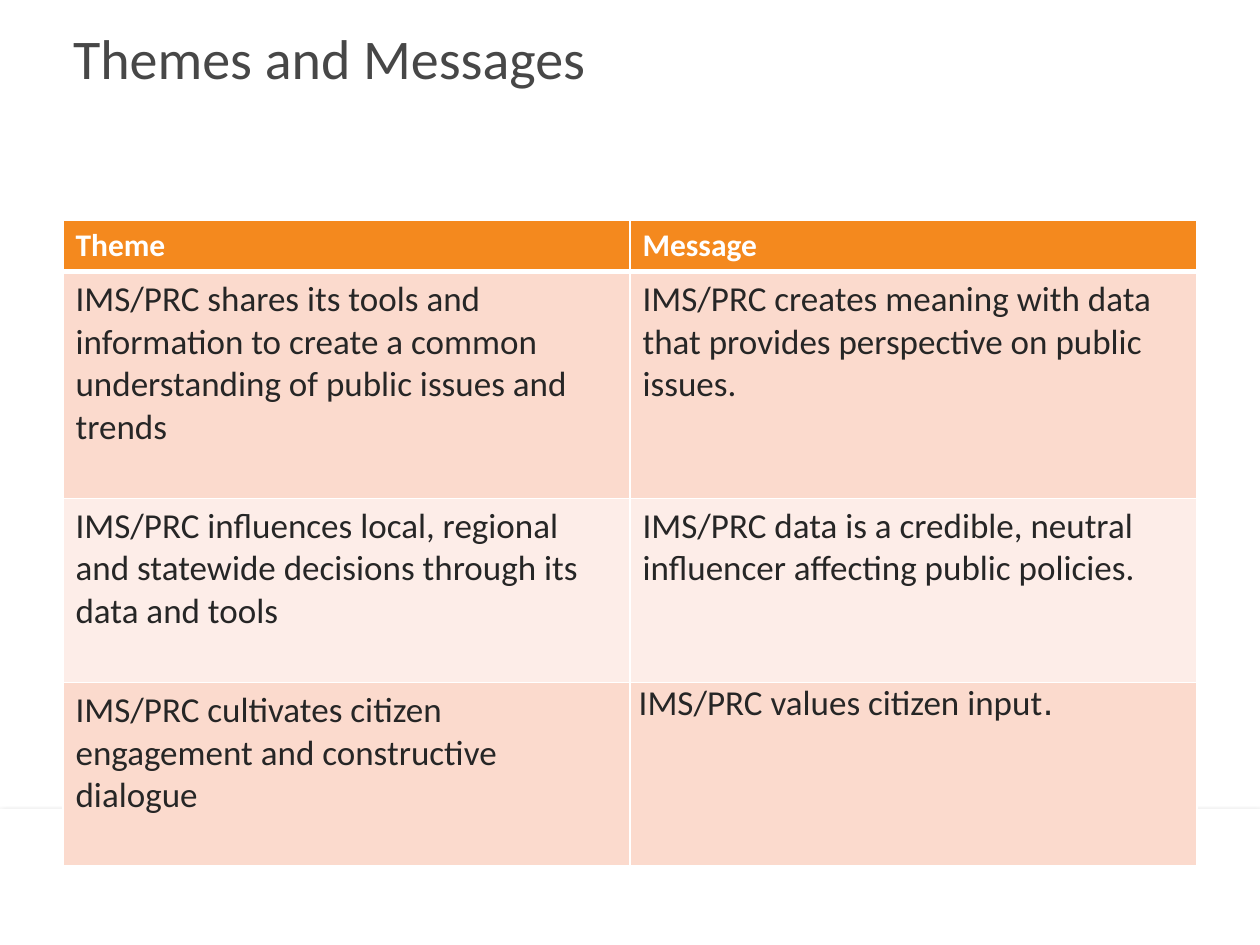
from lxml import etree
from pptx import Presentation
from pptx.dml.color import RGBColor
from pptx.enum.shapes import MSO_SHAPE
from pptx.enum.text import MSO_ANCHOR, PP_ALIGN
from pptx.oxml import parse_xml
from pptx.util import Pt

RECT = MSO_SHAPE.RECTANGLE
MIDDLE = MSO_ANCHOR.MIDDLE
LEFT = PP_ALIGN.LEFT
NS = "http://schemas.openxmlformats.org/drawingml/2006/main"

TITLE = "Themes and Messages"
ROWS = [
    ("Theme", "Message"),
    ("IMS/PRC shares its tools and information to create a common "
     "understanding of public issues and trends",
     "IMS/PRC creates meaning with data that provides perspective on "
     "public issues."),
    ("IMS/PRC influences local, regional and statewide decisions through "
     "its data and tools",
     "IMS/PRC data is a credible, neutral influencer affecting public "
     "policies."),
    ("IMS/PRC cultivates citizen engagement and constructive dialogue",
     "IMS/PRC values citizen input"),
]
HEIGHTS = [28.8, 129.6, 105.2, 104.6]
WIDTH = 324
FONT = "Calibri"
COLORS = {"white": "FFFFFF", "title": "474747", "text": "262626",
          "head": "F4891E", "odd": "FBDACD", "even": "FDEDE8"}


def color(name):
    return RGBColor.from_string(COLORS[name])


def style(font, size, name, bold=False, face=FONT):
    font.size, font.bold, font.name = Pt(size), bold, face
    font.color.rgb = color(name)


def border(cell, base):
    """White cell lines, with a heavier one at the base if asked."""
    props = cell._tc.get_or_add_tcPr()
    for i, side in enumerate("LRTB"):
        width = Pt(base if side == "B" else 1)
        props.insert(i, parse_xml(
            f'<a:ln{side} xmlns:a="{NS}" w="{width}"><a:solidFill>'
            f'<a:srgbClr val="{COLORS["white"]}"/></a:solidFill></a:ln{side}>'))


deck = Presentation()
deck.slide_width, deck.slide_height = Pt(720), Pt(540)
slide = deck.slides.add_slide(deck.slide_layouts[5])

# Title
title = slide.shapes.title
title.left, title.top, title.width, title.height = (
    Pt(34.56), Pt(5.76), Pt(661.68), Pt(54))
title.text_frame.text = TITLE
title.text_frame.vertical_anchor = MIDDLE
line = title.text_frame.paragraphs[0]
line.alignment = LEFT
style(line.runs[0].font, 32, "title")

# Footer band with a soft shadow
band = slide.shapes.add_shape(RECT, Pt(0), Pt(462.24), Pt(720), Pt(77.76))
band.fill.solid()
band.fill.fore_color.rgb = color("white")
band.line.fill.background()
band.shadow.inherit = False
effects = band._element.spPr.find(f"{{{NS}}}effectLst")
shade = etree.SubElement(effects, f"{{{NS}}}outerShdw", blurRad=str(Pt(3.1)),
                         dist=str(Pt(1.8)), dir="5400000", rotWithShape="0")
black = etree.SubElement(shade, f"{{{NS}}}srgbClr", val="000000")
etree.SubElement(black, f"{{{NS}}}alpha", val="35000")

# Table
table = slide.shapes.add_table(len(ROWS), 2, Pt(36), Pt(126), Pt(2 * WIDTH),
                               Pt(sum(HEIGHTS))).table
for col in table.columns:
    col.width = Pt(WIDTH)
for r, (texts, height) in enumerate(zip(ROWS, HEIGHTS)):
    table.rows[r].height = Pt(height)
    head = r == 0
    for c, text in enumerate(texts):
        cell = table.cell(r, c)
        cell.text_frame.text = text
        cell.fill.solid()
        cell.fill.fore_color.rgb = color(
            "head" if head else "odd" if r % 2 else "even")
        border(cell, 3 if head else 1)
        style(cell.text_frame.paragraphs[0].runs[0].font,
              18 if head else 20, "white" if head else "text", head)

# Last message: tighter margins and a full stop in another face
last = table.cell(len(ROWS) - 1, 1)
last.margin_left = last.margin_right = Pt(5)
last.margin_top = last.margin_bottom = Pt(0)
stop = last.text_frame.paragraphs[0].add_run()
stop.text = "."
style(stop.font, 20, "text", face="DejaVu Sans")

deck.save("out.pptx")
